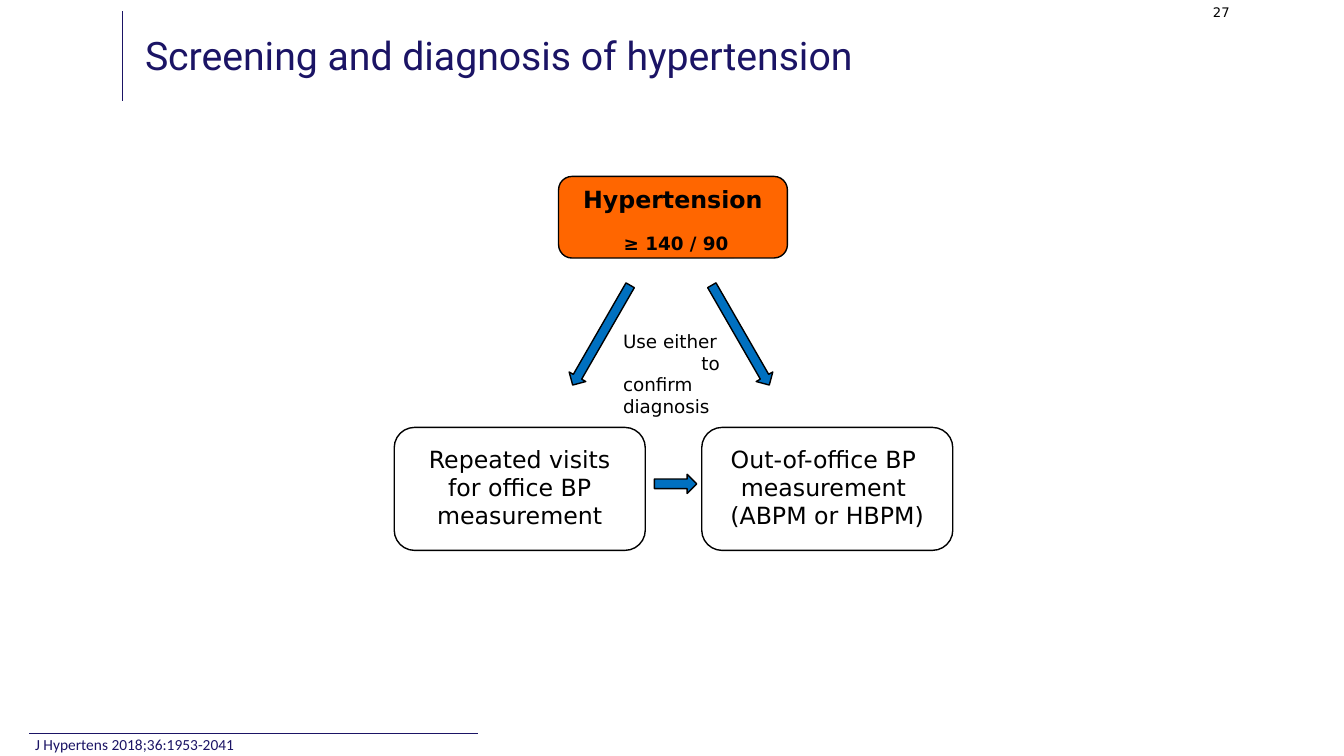
from math import atan2, degrees, hypot

from lxml.etree import SubElement
from pptx import Presentation
from pptx.dml.color import RGBColor
from pptx.enum.shapes import MSO_CONNECTOR as Connector, MSO_SHAPE as Preset
from pptx.enum.text import MSO_ANCHOR as Anchor, PP_ALIGN as Align
from pptx.oxml.ns import qn
from pptx.util import Inches, Pt

# Content
NAVY, BLACK, BLUE, ORANGE = "1B1465", "000000", "0070C0", "FF6600"
BODY_FONT = "DejaVu Sans"
TITLE = "Screening and diagnosis of hypertension"
CITATION = "J Hypertens 2018;36:1953-2041"
PAGE_NUMBER = "27"
CONFIRM_LINES = [("Use either", Align.LEFT), ("to", Align.RIGHT),
                 ("confirm", Align.LEFT), ("diagnosis", Align.LEFT)]
METHODS = ["Repeated visits\vfor office BP\vmeasurement",
           "Out-of-office BP \vmeasurement \v(ABPM or HBPM)"]

# Layout: left, top, width, height in inches
HYPERTENSION_BOX = (5.54, 1.75, 2.27, 0.81)
METHOD_BOX = (3.91, 4.24, 2.49, 1.22)
METHOD_STEP = 3.05
CORNER = 0.165
ARROW_WIDTH = 0.19
ARROWS = [((6.25, 2.83), (5.68, 3.82)),
          ((7.06, 2.83), (7.63, 3.82)),
          ((6.49, 4.8), (6.91, 4.8))]
RULES = [(1.21, 0.11, 1.21, 1), (0.29, 7.28, 4.74, 7.28)]

presentation = Presentation()
presentation.slide_width, presentation.slide_height = Inches(13.33), Inches(7.5)
slide = presentation.slides.add_slide(presentation.slide_layouts[6])


def color(value):
    return RGBColor.from_string(value)


def add_preset(preset, box, fill=None):
    shape = slide.shapes.add_shape(preset, *map(Inches, box))
    shape.shadow.inherit = False
    if fill:
        shape.fill.solid()
        shape.fill.fore_color.rgb = color(fill)
    else:
        shape.fill.background()
    shape.line.color.rgb = color(BLACK)
    shape.line.width = Pt(1)
    return shape


def set_frame(shape, inset=(0, 0), anchor=Anchor.TOP, wrap=True):
    frame = shape.text_frame
    frame.margin_left = frame.margin_right = Inches(inset[0])
    frame.margin_top = frame.margin_bottom = Inches(inset[1])
    frame.vertical_anchor = anchor
    frame.word_wrap = wrap
    return frame


def write(paragraph, text, size, font=BODY_FONT, ink=BLACK, align=Align.LEFT,
          bold=False, spacing=1.0):
    paragraph.text = text
    paragraph.alignment = align
    paragraph.line_spacing = spacing
    paragraph.font.size = Pt(size)
    paragraph.font.name = font
    paragraph.font.bold = bold
    paragraph.font.color.rgb = color(ink)


def add_text_box(box, **frame_options):
    return set_frame(slide.shapes.add_textbox(*map(Inches, box)), **frame_options)


def add_arrow(tail, tip):
    run, rise = tip[0] - tail[0], tip[1] - tail[1]
    length = hypot(run, rise)
    left = (tail[0] + tip[0] - length) / 2
    top = (tail[1] + tip[1] - ARROW_WIDTH) / 2
    arrow = add_preset(Preset.RIGHT_ARROW, (left, top, length, ARROW_WIDTH), BLUE)
    arrow.rotation = degrees(atan2(rise, run))


# Rules beside the title and above the citation
for rule in RULES:
    line = slide.shapes.add_connector(Connector.STRAIGHT, *map(Inches, rule))
    line.line.color.rgb = color(NAVY)
    line.line.width = Pt(0.5)
    SubElement(line.element.spPr, qn("a:effectLst"))

# Hypertension box
hypertension = add_preset(Preset.ROUNDED_RECTANGLE, HYPERTENSION_BOX, ORANGE)
hypertension.adjustments[0] = CORNER
frame = set_frame(hypertension, inset=(0, 0.04))
write(frame.paragraphs[0], "Hypertension", 16.9, align=Align.CENTER, bold=True)
threshold = frame.add_paragraph()
write(threshold, "≥ 140 / 90", 13.1, align=Align.CENTER, bold=True)
threshold.space_before = Pt(13.6)
threshold._p.get_or_add_pPr().set("marL", str(Inches(0.06)))

# Arrows between the boxes
for tail, tip in ARROWS:
    add_arrow(tail, tip)

# Note between the diagonal arrows
frame = add_text_box((6.18, 3.29, 0.96, 0.87))
for index, (text, align) in enumerate(CONFIRM_LINES):
    paragraph = frame.add_paragraph() if index else frame.paragraphs[0]
    write(paragraph, text, 13.1, align=align, spacing=0.98)

# Confirmation methods
left, top, width, height = METHOD_BOX
for index, text in enumerate(METHODS):
    method = add_preset(Preset.ROUNDED_RECTANGLE,
                        (left + index * METHOD_STEP, top, width, height))
    method.adjustments[0] = CORNER
    frame = set_frame(method, anchor=Anchor.MIDDLE)
    frame.margin_bottom = Inches(0.02)
    write(frame.paragraphs[0], text, 16.9, align=Align.CENTER, spacing=0.99)

# Page number, title and citation
frame = add_text_box((12.03, 0.04, 0.19, 0.17), wrap=False)
write(frame.paragraphs[0], PAGE_NUMBER, 9.4)
frame = add_text_box((1.34, 0.05, 8.46, 1.05), inset=(0.1, 0.05), anchor=Anchor.MIDDLE)
write(frame.paragraphs[0], TITLE, 28, "Roboto", NAVY, spacing=0.9)
frame = add_text_box((0.25, 7.3, 8.33, 0.2), inset=(0.1, 0), anchor=Anchor.MIDDLE)
write(frame.paragraphs[0], CITATION, 11, "Calibri", NAVY, spacing=0.9)

presentation.save("out.pptx")
